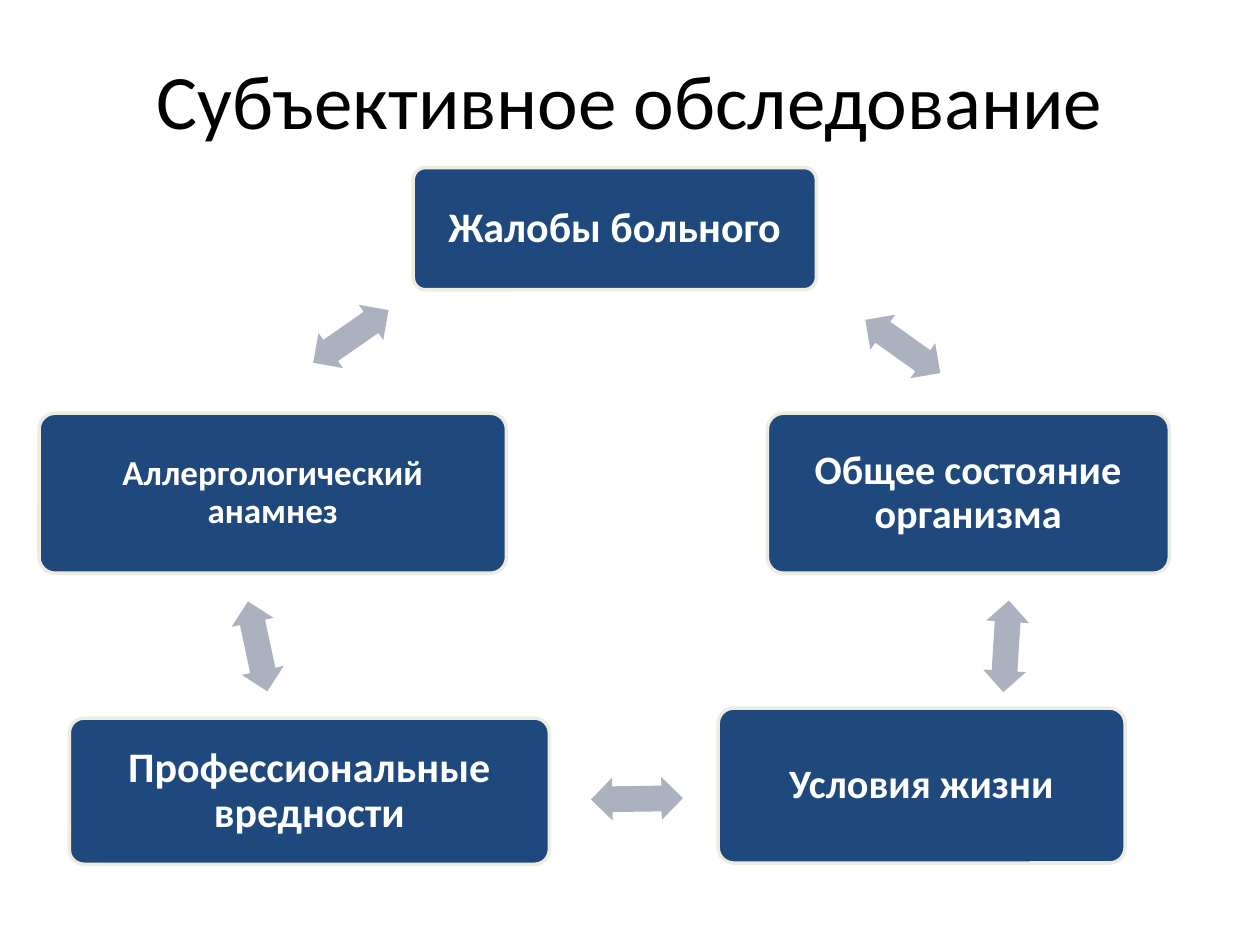
from pptx import Presentation
from pptx.dml.color import RGBColor
from pptx.enum.shapes import MSO_SHAPE
from pptx.enum.text import MSO_ANCHOR, PP_ALIGN
from pptx.util import Inches, Pt

BLACK = RGBColor(0x00, 0x00, 0x00)
WHITE = RGBColor(0xFF, 0xFF, 0xFF)
NAVY = RGBColor(0x1F, 0x49, 0x7D)
CREAM = RGBColor(0xEE, 0xEC, 0xE1)
GRAY = RGBColor(0xAC, 0xB1, 0xBF)
ROUNDED = MSO_SHAPE.ROUNDED_RECTANGLE
ARROW = MSO_SHAPE.LEFT_RIGHT_ARROW
CENTER = PP_ALIGN.CENTER
TOP, MIDDLE = MSO_ANCHOR.TOP, MSO_ANCHOR.MIDDLE

BOXES = [
    ("Жалобы больного", 3.28, 1.33, 3.2, 0.97, 24),
    ("Общее состояние организма", 6.09, 3.28, 3.19, 1.27, 23),
    ("Условия жизни", 5.7, 5.62, 3.23, 1.23, 23),
    ("Профессиональные вредности", 0.55, 5.7, 3.81, 1.16, 24),
    ("Аллергологический\vанамнез", 0.31, 3.28, 3.71, 1.27, 20),
]
ARROWS = [
    (6.8, 2.58, 35.4),
    (7.62, 4.96, 93.5),
    (4.69, 6.17, 179.2),
    (1.68, 4.96, 257.9),
    (2.42, 2.5, 325.1),
]


class SlideBuilder:
    font = "Calibri"

    def __init__(self, slide):
        self.slide = slide

    def set_text(self, sp, text, size, color, anchor, bold=False):
        tf = sp.text_frame
        tf.word_wrap = True
        tf.vertical_anchor = anchor
        p = tf.paragraphs[0]
        p.text = text
        p.alignment = CENTER
        p.font.name = self.font
        p.font.size = Pt(size)
        p.font.bold = bold
        p.font.color.rgb = color
        return tf, p

    def title(self, text, x, y, w, h):
        sp = self.slide.shapes.add_textbox(
            Inches(x), Inches(y), Inches(w), Inches(h))
        tf, _ = self.set_text(sp, text, 44, BLACK, TOP)
        tf.margin_top = 0

    def shape(self, kind, x, y, w, h, fill):
        sp = self.slide.shapes.add_shape(
            kind, Inches(x), Inches(y), Inches(w), Inches(h))
        sp.shadow.inherit = False
        sp.fill.solid()
        sp.fill.fore_color.rgb = fill
        return sp

    def box(self, text, x, y, w, h, size):
        sp = self.shape(ROUNDED, x, y, w, h, NAVY)
        sp.adjustments[0] = 0.1
        sp.line.color.rgb = CREAM
        sp.line.width = Pt(2)
        tf, p = self.set_text(sp, text, size, WHITE, MIDDLE, bold=True)
        tf.margin_left = tf.margin_right = Inches(0.12)
        tf.margin_top = tf.margin_bottom = Inches(0.12)
        p.line_spacing = 0.9

    def arrow(self, x, y, angle):
        sp = self.shape(ARROW, x, y, 0.73, 0.34, GRAY)
        sp.adjustments[0] = 0.6
        sp.adjustments[1] = 0.5
        sp.line.fill.background()
        sp.rotation = angle


def main():
    prs = Presentation()
    prs.slide_width, prs.slide_height = Inches(10), Inches(7.5)
    s = SlideBuilder(prs.slides.add_slide(prs.slide_layouts[6]))
    s.title("Субъективное обследование", 0, 0.42, 10, 1.46)
    for box in BOXES:
        s.box(*box)
    for arrow in ARROWS:
        s.arrow(*arrow)
    prs.save("out.pptx")


if __name__ == "__main__":
    main()
